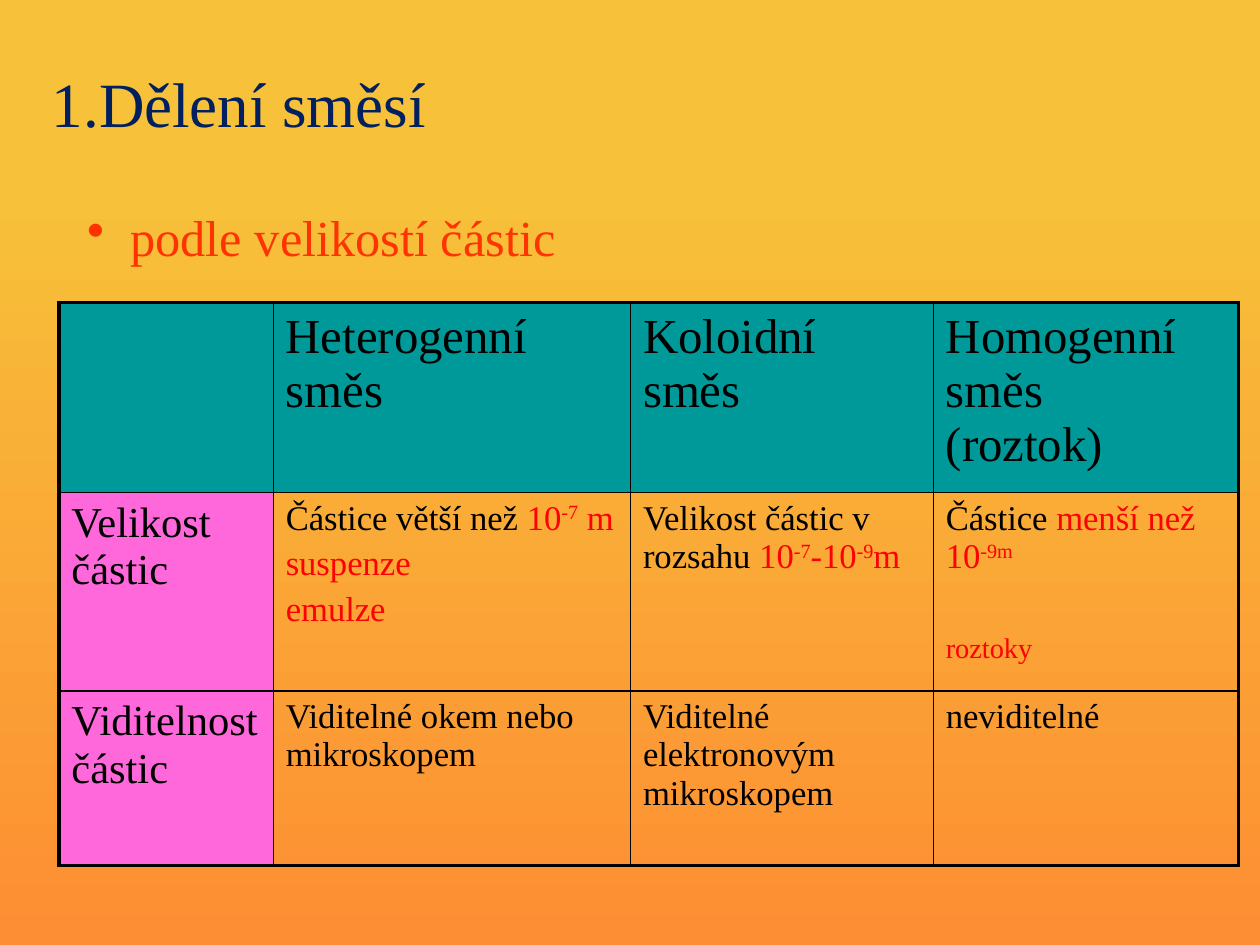
from lxml import etree
from pptx import Presentation
from pptx.dml.color import RGBColor
from pptx.enum.text import MSO_ANCHOR
from pptx.oxml.ns import qn
from pptx.util import Inches, Pt

MIDDLE = MSO_ANCHOR.MIDDLE
FONT = "Times New Roman"
BLACK, RED, NAVY, ORANGE = "000000", "FF0000", "002060", "FF3300"
TEAL, PINK = "009999", "FE68DA"
SKY_TOP, SKY_BOTTOM = "F7C139", "FD8E33"

TITLE = "1.Dělení směsí"
SUBTITLE = "podle velikostí částic"

# Each cell is a list of paragraphs; each paragraph lists (text, colour, raised).
BREAK = "\v"
HEADINGS = [
    [],
    [[("Heterogenní směs", BLACK, False)]],
    [[("Koloidní směs", BLACK, False)]],
    [[("Homogenní směs", BLACK, False), (BREAK, BLACK, False),
      ("(roztok)", BLACK, False)]],
]
SIZES = [
    [[("Velikost částic", BLACK, False)]],
    [[("Částice větší než ", BLACK, False), ("10", RED, False),
      ("-7", RED, True), (" m", RED, False)],
     [("suspenze", RED, False)],
     [("emulze", RED, False)]],
    [[("Velikost částic v rozsahu ", BLACK, False), ("10", RED, False),
      ("-7", RED, True), ("-10", RED, False), ("-9", RED, True),
      ("m", RED, False)]],
    [[("Částice ", BLACK, False), ("menší než 10", RED, False),
      ("-9m", RED, True)],
     [("roztoky", RED, False)]],
]
VISIBILITY = [
    [[("Viditelnost částic", BLACK, False)]],
    [[("Viditelné okem nebo mikroskopem", BLACK, False)]],
    [[("Viditelné elektronovým mikroskopem", BLACK, False)]],
    [[("neviditelné", BLACK, False)]],
]
ROWS = [HEADINGS, SIZES, VISIBILITY]
COLUMN_WIDTHS = [1.89, 3.15, 2.67, 2.69]
ROW_HEIGHTS = [1.54, 1.75, 1.54]
TABLE_LEFT, TABLE_TOP = 0.52, 2.67
HEADING_SIZE, LABEL_SIZE, BODY_SIZE, SOLUTION_SIZE = 31, 27, 22, 18
PARAGRAPH_GAP, SOLUTION_GAP = 4.5, 36
OUTER_LINE, INNER_LINE = 2.25, 1


def rgb(value):
    return RGBColor.from_string(value)


def style(run, size, color):
    run.font.name = FONT
    run.font.size = Pt(size)
    run.font.color.rgb = rgb(color)


def add_line_of_text(slide, text, box, size, color):
    frame = slide.shapes.add_textbox(*(Inches(n) for n in box)).text_frame
    frame.word_wrap = True
    frame.text = text
    style(frame.paragraphs[0].runs[0], size, color)
    return frame


def add_bullet(paragraph, indent):
    properties = paragraph._p.get_or_add_pPr()
    properties.set("marL", str(Inches(indent)))
    properties.set("indent", str(-Inches(indent)))
    etree.SubElement(properties, qn("a:buChar")).set("char", "•")


def set_borders(cell, row, column):
    outer_sides = {
        "a:lnL": column == 0,
        "a:lnR": column == len(COLUMN_WIDTHS) - 1,
        "a:lnT": row == 0,
        "a:lnB": row == len(ROW_HEIGHTS) - 1,
    }
    properties = cell._tc.get_or_add_tcPr()
    for side, is_outer in outer_sides.items():
        line = etree.SubElement(properties, qn(side))
        line.set("w", str(Pt(OUTER_LINE if is_outer else INNER_LINE)))
        fill = etree.SubElement(line, qn("a:solidFill"))
        etree.SubElement(fill, qn("a:srgbClr")).set("val", BLACK)


def write_cell(cell, paragraphs, size):
    cell.margin_left = cell.margin_right = Inches(0.11)
    cell.margin_top = cell.margin_bottom = Inches(0.06)
    frame = cell.text_frame
    for index, parts in enumerate(paragraphs):
        paragraph = frame.add_paragraph() if index else frame.paragraphs[0]
        is_solution = parts[0][0] == "roztoky"
        if index:
            paragraph.space_before = Pt(SOLUTION_GAP if is_solution else PARAGRAPH_GAP)
        for text, color, raised in parts:
            if text == BREAK:
                paragraph.add_line_break()
                continue
            run = paragraph.add_run()
            run.text = text
            style(run, SOLUTION_SIZE if is_solution else size, color)
            if raised:
                run.font._element.set("baseline", "30000")


def add_mixture_table(slide):
    table = slide.shapes.add_table(
        len(ROWS), len(COLUMN_WIDTHS), Inches(TABLE_LEFT), Inches(TABLE_TOP),
        Inches(sum(COLUMN_WIDTHS)), Inches(sum(ROW_HEIGHTS))).table
    table.first_row = table.horz_banding = False
    for column, width in zip(table.columns, COLUMN_WIDTHS):
        column.width = Inches(width)
    for row, height in zip(table.rows, ROW_HEIGHTS):
        row.height = Inches(height)
    for r, contents in enumerate(ROWS):
        for c, paragraphs in enumerate(contents):
            cell = table.cell(r, c)
            if r == 0:
                size, color = HEADING_SIZE, TEAL
            elif c == 0:
                size, color = LABEL_SIZE, PINK
            else:
                size, color = BODY_SIZE, None
            write_cell(cell, paragraphs, size)
            set_borders(cell, r, c)
            if color:
                cell.fill.solid()
                cell.fill.fore_color.rgb = rgb(color)
            else:
                cell.fill.background()


def set_background(slide):
    fill = slide.background.fill
    fill.gradient()
    fill.gradient_angle = 270
    stops = [(0.2, SKY_TOP), (1, SKY_BOTTOM)]
    for stop, (position, color) in zip(fill.gradient_stops, stops):
        stop.position = position
        stop.color.rgb = rgb(color)


def main():
    deck = Presentation()
    deck.slide_width, deck.slide_height = Inches(11.11), Inches(8.33)
    slide = deck.slides.add_slide(deck.slide_layouts[6])
    set_background(slide)
    title = add_line_of_text(slide, TITLE, (0.36, 0.39, 10, 1.02), 40, NAVY)
    title.vertical_anchor = MIDDLE
    subtitle = add_line_of_text(slide, SUBTITLE, (0.67, 1.77, 9.88, 0.7), 32, ORANGE)
    add_bullet(subtitle.paragraphs[0], 0.38)
    add_mixture_table(slide)
    deck.save("out.pptx")


if __name__ == "__main__":
    main()
